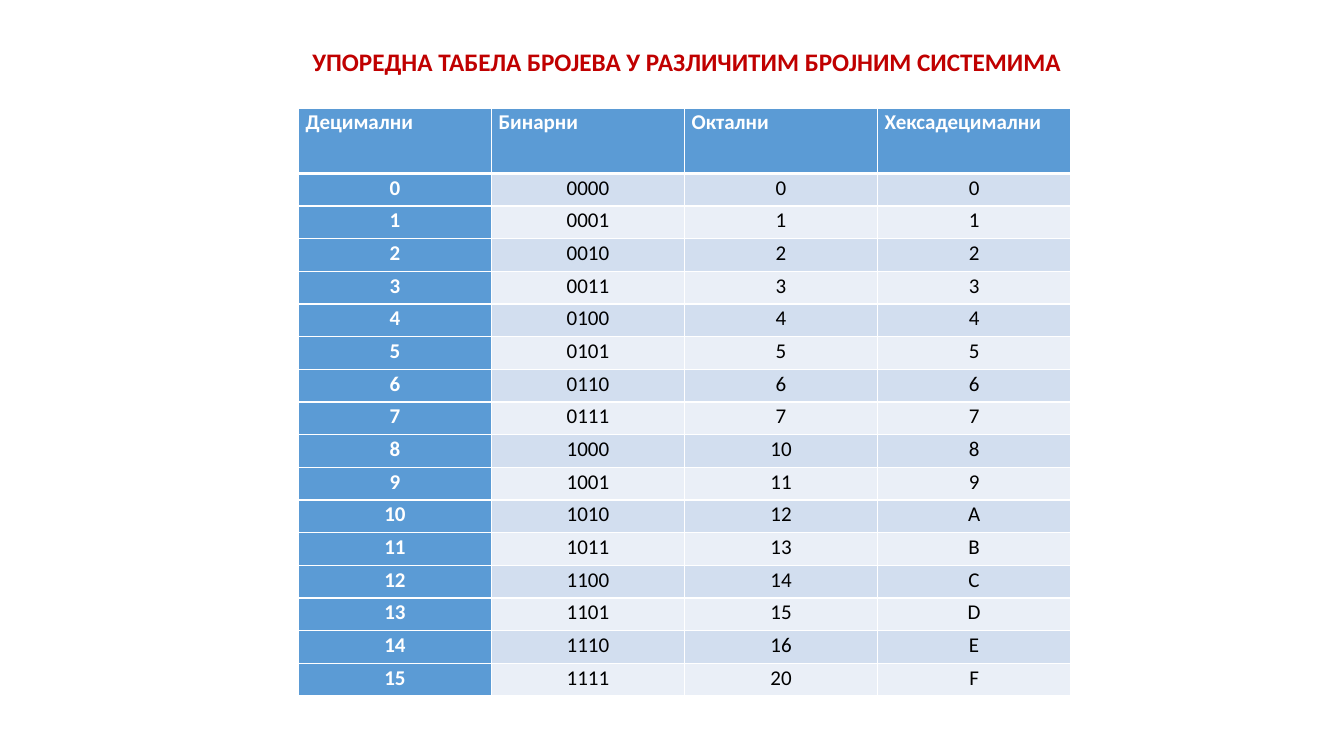
import pptx
import pptx.dml.color
import pptx.enum.text
import pptx.oxml
import pptx.oxml.ns
import pptx.util
from dataclasses import dataclass

Cm, Pt = pptx.util.Cm, pptx.util.Pt
CENTER = pptx.enum.text.PP_ALIGN.CENTER

# Content
TITLE = "УПОРЕДНА ТАБЕЛА БРОЈЕВА У РАЗЛИЧИТИМ БРОЈНИМ СИСТЕМИМА"
HEADERS = ("Децимални", "Бинарни", "Октални", "Хексадецимални")
NUMBERS = [
    ("0", "0000", "0", "0"),
    ("1", "0001", "1", "1"),
    ("2", "0010", "2", "2"),
    ("3", "0011", "3", "3"),
    ("4", "0100", "4", "4"),
    ("5", "0101", "5", "5"),
    ("6", "0110", "6", "6"),
    ("7", "0111", "7", "7"),
    ("8", "1000", "10", "8"),
    ("9", "1001", "11", "9"),
    ("10", "1010", "12", "А"),
    ("11", "1011", "13", "B"),
    ("12", "1100", "14", "C"),
    ("13", "1101", "15", "D"),
    ("14", "1110", "16", "E"),
    ("15", "1111", "20", "F"),
]


@dataclass(frozen=True)
class Theme:
    font: str = "Calibri"
    title_size: int = 18
    cell_size: int = 15
    title: str = "C00000"
    accent: str = "5B9BD5"
    bands: tuple = ("D2DEEF", "EAEFF7")
    light: str = "FFFFFF"
    dark: str = "000000"
    grid_line: int = 1
    header_line: int = 3


THEME = Theme()

# Layout
TABLE_X, TABLE_Y = Cm(7.52), Cm(2.72)
TABLE_W, TABLE_H = Cm(19.46), Cm(14.83)
HEADER_H = Cm(1.65)
ROW_H = (TABLE_H - HEADER_H) // len(NUMBERS)
COL_W = TABLE_W // len(HEADERS)


def style_paragraph(p, size, color, bold):
    p.font.name = THEME.font
    p.font.size = Pt(size)
    p.font.bold = bold
    p.font.color.rgb = pptx.dml.color.RGBColor.from_string(color)


def set_borders(cell, top, bottom):
    tc_pr = cell._tc.get_or_add_tcPr()
    widths = {"L": THEME.grid_line, "R": THEME.grid_line, "T": top, "B": bottom}
    for side, width in widths.items():
        tc_pr.append(pptx.oxml.parse_xml(
            f'<a:ln{side} {pptx.oxml.ns.nsdecls("a")} w="{Pt(width)}">'
            f'<a:solidFill><a:srgbClr val="{THEME.light}"/></a:solidFill></a:ln{side}>'))


def fill_cell(cell, text, row, col):
    is_header = row == 0
    is_accent = is_header or col == 0
    # The thick line lies between the header and the first number
    set_borders(cell,
                top=THEME.header_line if row == 1 else THEME.grid_line,
                bottom=THEME.header_line if is_header else THEME.grid_line)
    fill = THEME.accent if is_accent else THEME.bands[(row - 1) % 2]
    cell.fill.solid()
    cell.fill.fore_color.rgb = pptx.dml.color.RGBColor.from_string(fill)
    cell.margin_left = cell.margin_right = Cm(0.18)
    cell.margin_top = cell.margin_bottom = 0
    p = cell.text_frame.paragraphs[0]
    p.text = text
    p.line_spacing = 1.07
    if not is_header:
        p.alignment = CENTER
    style_paragraph(p, THEME.cell_size, THEME.light if is_accent else THEME.dark, is_accent)


def add_number_table(s):
    rows = [HEADERS] + NUMBERS
    table = s.shapes.add_table(len(rows), len(HEADERS),
                               TABLE_X, TABLE_Y, TABLE_W, TABLE_H).table
    for column in table.columns:
        column.width = COL_W
    for r, values in enumerate(rows):
        table.rows[r].height = ROW_H if r else HEADER_H
        for c, text in enumerate(values):
            fill_cell(table.cell(r, c), text, r, c)


def add_title(s):
    tf = s.shapes.add_textbox(TABLE_X, Cm(1.04), Cm(19.58), Cm(1.02)).text_frame
    tf.word_wrap = False
    tf.auto_size = pptx.enum.text.MSO_AUTO_SIZE.SHAPE_TO_FIT_TEXT
    p = tf.paragraphs[0]
    p.text = TITLE
    p.alignment = CENTER
    style_paragraph(p, THEME.title_size, THEME.title, True)


def main():
    prs = pptx.Presentation()
    prs.slide_width, prs.slide_height = Cm(33.87), Cm(19.05)
    s = prs.slides.add_slide(prs.slide_layouts[6])
    add_number_table(s)
    add_title(s)
    prs.save("out.pptx")


if __name__ == "__main__":
    main()
